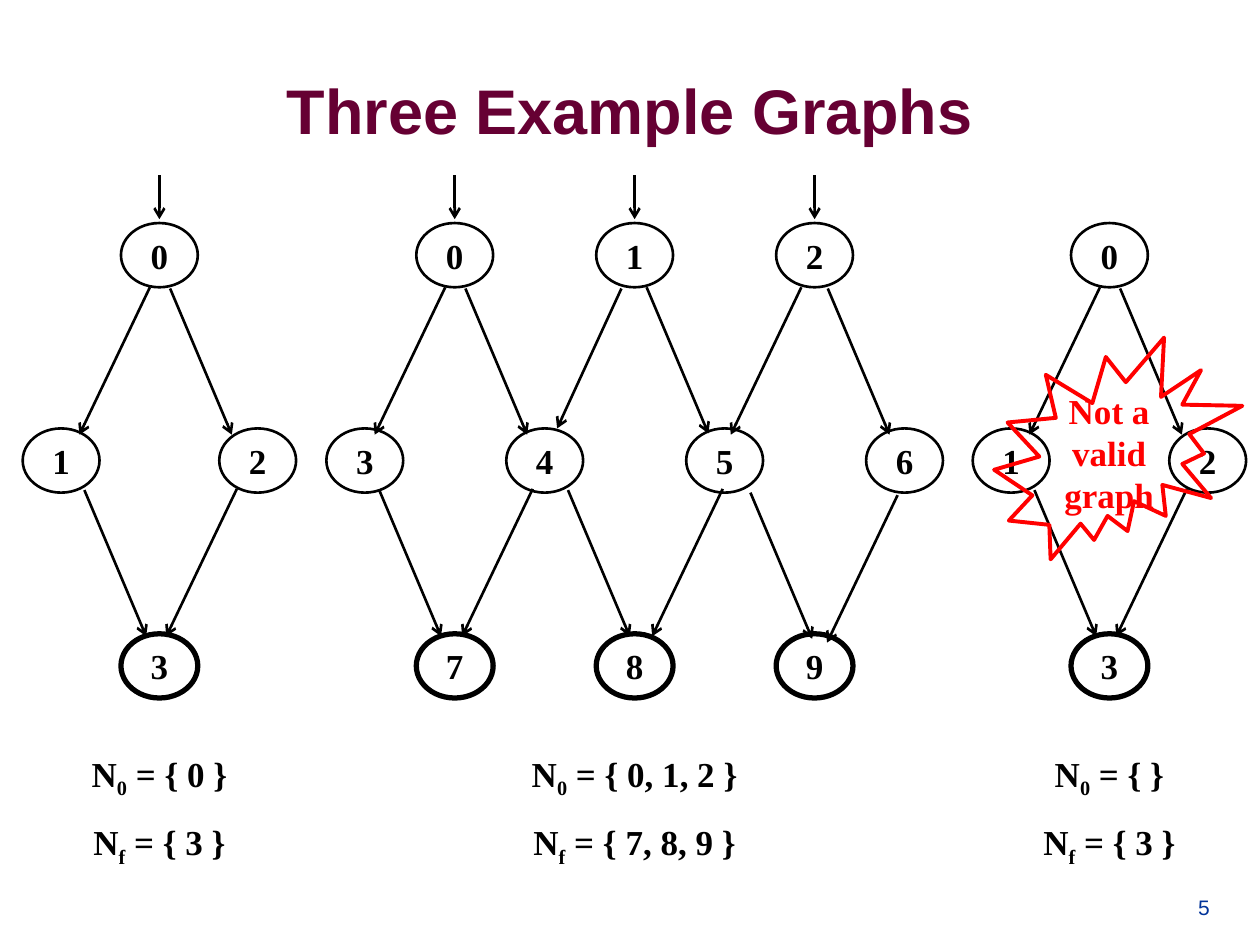
from pptx import Presentation
from pptx.dml.color import RGBColor
from pptx.enum.shapes import MSO_CONNECTOR, MSO_SHAPE
from pptx.enum.text import MSO_ANCHOR, PP_ALIGN
from pptx.oxml.ns import qn
from pptx.util import Inches, Pt
from lxml.etree import SubElement

HUES = {"title": "660033", "ink": "000000", "alert": "FF0000", "page": "003399"}
HEAD = {"name": "Arial", "size": Pt(36), "bold": True, "hue": "title"}
PAGE = {"name": "Arial", "size": Pt(12), "bold": False, "hue": "page"}
BODY = {"name": "Times New Roman", "size": Pt(20), "bold": True, "hue": "ink"}
ALERT = {**BODY, "hue": "alert"}

# Node size, row tops and arrow steps, in inches
WIDE, HIGH = 0.61, 0.51
ROWS = [0.38, 2.01, 3.64]
STEPS = {"in": (0, 0.35), "left": (-0.56, 1.17), "right": (0.49, 1.16),
         "short": (-0.51, 1.11)}

# Nodes: label -> (column, row). Edges: label, start within node, step
DIAMOND = {
    "pitch": 0.78,
    "nodes": {"0": (1, 0), "1": (0, 1), "2": (2, 1), "3": (1, 2)},
    "edges": [("0", 0.23, 0.51, "left"), ("0", 0.39, 0.52, "right"),
              ("1", 0.49, 0.49, "right"), ("2", 0.14, 0.48, "left")],
}
LATTICE = {
    "pitch": 0.714,
    "nodes": {"0": (1, 0), "1": (3, 0), "2": (5, 0),
              "3": (0, 1), "4": (2, 1), "5": (4, 1), "6": (6, 1),
              "7": (1, 2), "8": (3, 2), "9": (5, 2)},
    "edges": [("0", 0.23, 0.51, "left"), ("0", 0.39, 0.52, "right"),
              ("1", 0.20, 0.52, "short"), ("1", 0.40, 0.51, "right"),
              ("2", 0.20, 0.51, "left"), ("2", 0.41, 0.52, "right"),
              ("3", 0.42, 0.49, "right"), ("4", 0.21, 0.48, "left"),
              ("4", 0.49, 0.49, "right"), ("5", 0.29, 0.48, "left"),
              ("5", 0.51, 0.51, "right"), ("6", 0.25, 0.53, "left")],
}


def paint(font, look):
    for key, value in look.items():
        if key == "hue":
            font.color.rgb = RGBColor.from_string(HUES[value])
        else:
            setattr(font, key, value)


def write(frame, lines, look, align, anchor=MSO_ANCHOR.MIDDLE, wrap=True):
    """Fill a frame; each line is a list of (text, is subscript) runs."""
    frame.word_wrap = wrap
    frame.vertical_anchor = anchor
    for i, line in enumerate(lines):
        para = frame.paragraphs[0] if i == 0 else frame.add_paragraph()
        para.alignment = align
        for text, sub in line:
            run = para.add_run()
            run.text = text
            paint(run.font, look)
            if sub:
                run._r.get_or_add_rPr().set("baseline", "-25000")


def label(slide, box, lines, look, align, anchor):
    frame = slide.shapes.add_textbox(*map(Inches, box)).text_frame
    write(frame, lines, look, align, anchor)
    return frame


def outline(shapes, kind, box, hue, weight):
    shape = shapes.add_shape(kind, *map(Inches, box))
    shape.shadow.inherit = False
    shape.fill.background()
    shape.line.color.rgb = RGBColor.from_string(HUES[hue])
    shape.line.width = Pt(weight)
    return shape


def node(shapes, left, top, text, final):
    oval = outline(shapes, MSO_SHAPE.OVAL, (left, top, WIDE, HIGH), "ink",
                   3 if final else 1.5)
    frame = oval.text_frame
    for side in ("left", "right", "top", "bottom"):
        setattr(frame, f"margin_{side}", 0)
    write(frame, [[(text, False)]], BODY, PP_ALIGN.CENTER, wrap=False)


def arrow(shapes, x, y, step):
    dx, dy = STEPS[step]
    line = shapes.add_connector(MSO_CONNECTOR.STRAIGHT,
                                *map(Inches, (x, y, x + dx, y + dy)))
    line.line.color.rgb = RGBColor.from_string(HUES["ink"])
    line.line.width = Pt(1.5)
    props = line._element.spPr
    SubElement(props.get_or_add_ln(), qn("a:tailEnd"), type="arrow")
    SubElement(props, qn("a:effectLst"))


def graph(slide, left, top, plan, starts, first, last, width):
    """Draw one graph with its two node sets centred below it."""
    shapes = slide.shapes.add_group_shape().shapes
    spots = {}
    for text, (col, row) in plan["nodes"].items():
        spots[text] = left + col * plan["pitch"], top + ROWS[row]
        node(shapes, *spots[text], text, row == 2)
    entries = [(text, WIDE / 2, -0.38, "in") for text in starts]
    for text, dx, dy, step in entries + plan["edges"]:
        x, y = spots[text]
        arrow(shapes, x + dx, y + dy, step)

    # Initial and final node sets
    cols = max(col for col, _ in plan["nodes"].values())
    mid = left + (cols * plan["pitch"] + WIDE) / 2
    lines = [[("N", False), (sub, True), (f" = {members}", False)]
             for sub, members in (("0", first), ("f", last))]
    frame = label(slide, (mid - width / 2, top + 4.53, width, 0.93), lines,
                  BODY, PP_ALIGN.CENTER, MSO_ANCHOR.TOP)
    frame.paragraphs[1].space_before = Pt(12)


def burst(slide, box):
    star = outline(slide.shapes, MSO_SHAPE.EXPLOSION2, box, "alert", 2.25)
    lines = [[(text, False)] for text in ("Not a", "valid", "graph")]
    write(star.text_frame, lines, ALERT, PP_ALIGN.CENTER, wrap=False)


def main():
    deck = Presentation()
    deck.slide_width, deck.slide_height = Inches(10), Inches(7.5)
    slide = deck.slides.add_slide(deck.slide_layouts[6])

    # Title and page number
    label(slide, (0.5, 0.24, 9, 1.25), [[("Three Example Graphs", False)]],
          HEAD, PP_ALIGN.CENTER, MSO_ANCHOR.MIDDLE)
    label(slide, (9.01, 6.83, 0.69, 0.52), [[("5", False)]],
          PAGE, PP_ALIGN.RIGHT, MSO_ANCHOR.BOTTOM)

    # Graphs from left to right, the last one invalid
    graph(slide, 0.18, 1.39, DIAMOND, "0", "{ 0 }", "{ 3 }", 1.59)
    graph(slide, 7.72, 1.39, DIAMOND, "", "{ }", "{ 3 }", 1.59)
    graph(slide, 2.59, 1.39, LATTICE, "012", "{ 0, 1, 2 }", "{ 7, 8, 9 }", 2.46)
    burst(slide, (7.89, 2.68, 1.97, 1.76))

    deck.save("out.pptx")


if __name__ == "__main__":
    main()
